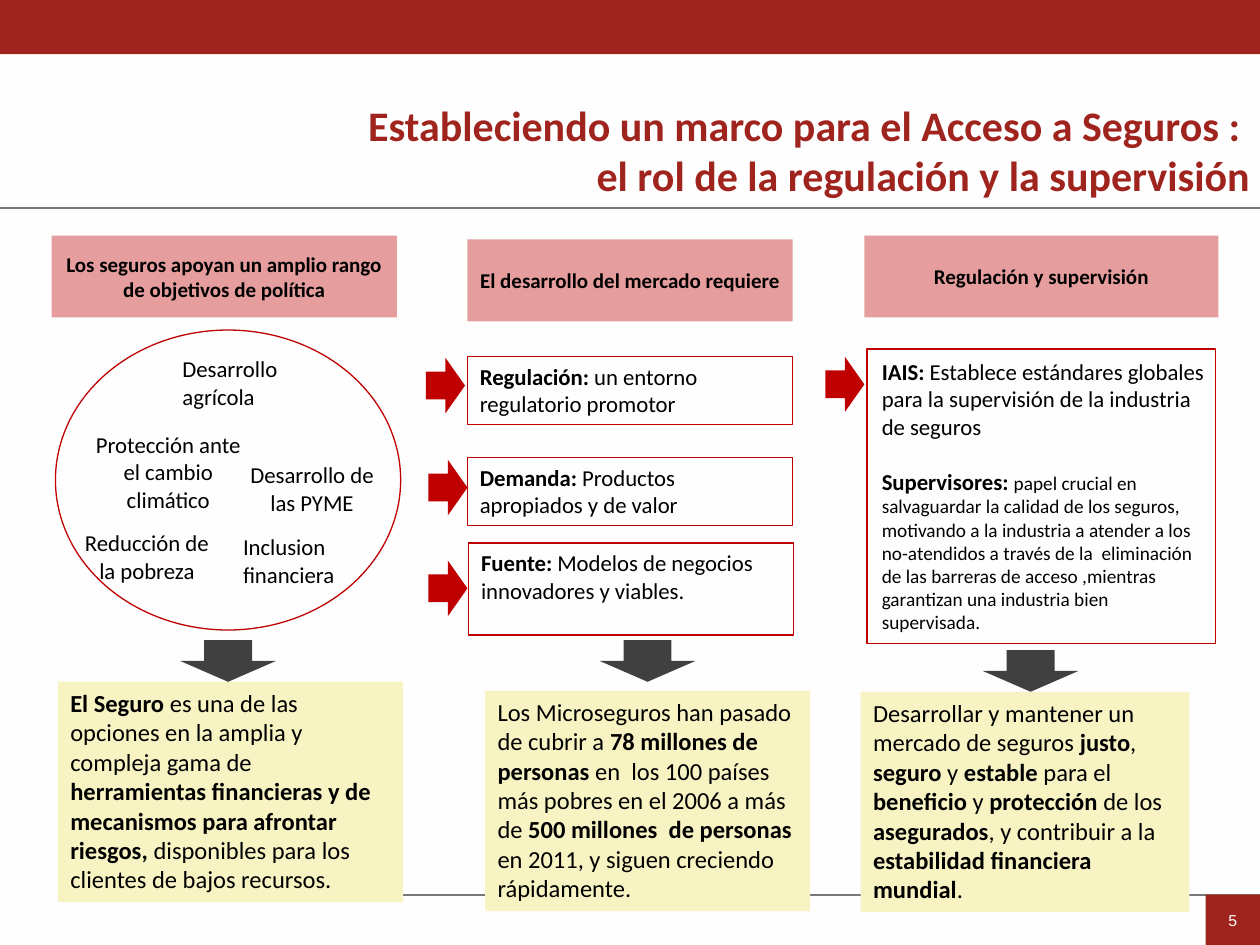
from dataclasses import dataclass
from typing import Optional

import pptx
import pptx.dml.color
import pptx.enum.shapes
import pptx.enum.text
import pptx.oxml
import pptx.oxml.ns
import pptx.util
from lxml import etree

Pt = pptx.util.Pt
MSO = pptx.enum.shapes.MSO_SHAPE
ALIGN = pptx.enum.text.PP_ALIGN
ANCHOR = pptx.enum.text.MSO_ANCHOR
qn = pptx.oxml.ns.qn

COLORS = {
    "background": "FEFEFE",
    "brand": "A0241E",
    "rule": "777978",
    "red": "C00000",
    "dark": "404040",
    "cream": "F7F3C3",
    "text": "000000",
}


@dataclass
class Box:
    """A shape or label; **marks** in its text switch bold on and off."""
    left: float
    top: float
    width: float
    height: float
    text: str = ""
    size: float = 13
    align: ALIGN = ALIGN.LEFT
    anchor: ANCHOR = ANCHOR.TOP
    color: str = "text"
    font: str = "Calibri"
    kind: Optional[MSO] = MSO.RECTANGLE  # None makes a text box
    fill: Optional[str] = None
    alpha: Optional[int] = None
    line: Optional[str] = None


def rgb(name: str) -> pptx.dml.color.RGBColor:
    return pptx.dml.color.RGBColor.from_string(COLORS[name])


def add_rule(slide, x: float, y: float) -> None:
    ln = slide.shapes.add_connector(
        pptx.enum.shapes.MSO_CONNECTOR.STRAIGHT, Pt(x), Pt(y), Pt(720), Pt(y))
    ln.line.color.rgb = rgb("rule")
    ln.line.width = Pt(1.25)
    etree.SubElement(ln._element.spPr, qn("a:effectLst"))


def write_paragraph(p, box: Box, text: str) -> None:
    p.alignment = box.align
    for i, part in enumerate(text.split("**")):
        if not part:
            continue
        if part == "\v":
            p.add_line_break()
            continue
        r = p.add_run()
        r.text = part
        r.font.name = box.font
        r.font.size = Pt(box.size)
        r.font.bold = i % 2 == 1
        r.font.color.rgb = rgb(box.color)


def add_box(slide, box: Box):
    area = [Pt(v) for v in (box.left, box.top, box.width, box.height)]
    if box.kind is None:
        sp = slide.shapes.add_textbox(*area)
    else:
        sp = slide.shapes.add_shape(box.kind, *area)
        sp.shadow.inherit = False
        if box.fill:
            sp.fill.solid()
            sp.fill.fore_color.rgb = rgb(box.fill)
        else:
            sp.fill.background()
        if box.alpha:
            clr = sp._element.spPr.find(".//" + qn("a:srgbClr"))
            etree.SubElement(clr, qn("a:alpha"), val=str(box.alpha * 1000))
        if box.line:
            sp.line.color.rgb = rgb(box.line)
            sp.line.width = Pt(0.75)
        else:
            sp.line.fill.background()
    if box.text:
        tf = sp.text_frame
        tf.word_wrap = True
        tf.vertical_anchor = box.anchor
        for i, text in enumerate(box.text.split("\n")):
            p = tf.paragraphs[0] if i == 0 else tf.add_paragraph()
            write_paragraph(p, box, text)
    return sp


def header(left: float, top: float, width: float, text: str) -> Box:
    return Box(left, top, width, 46.8, f"**{text}**", 12, ALIGN.CENTER,
               ANCHOR.MIDDLE, fill="red", alpha=38)


def label(left: float, top: float, width: float, height: float, text: str,
          align: ALIGN = ALIGN.CENTER) -> Box:
    return Box(left, top, width, height, text, align=align, kind=None)


def need(left: float, top: float, height: float, text: str) -> Box:
    return Box(left, top, 185.8, height, text, line="red")


def right_arrow(left: float, top: float) -> Box:
    return Box(left, top, 22.3, 31.7, kind=MSO.RIGHT_ARROW, fill="red")


def down_arrow(left: float, top: float) -> Box:
    return Box(left, top, 54.7, 23.8, kind=MSO.DOWN_ARROW, fill="dark")


def result(left: float, top: float, width: float, text: str) -> Box:
    return Box(left, top, width, 126, text, 14, fill="cream")


FRAME = [
    Box(0, 0, 720, 31, fill="brand"),
    Box(689, 511.2, 31, 28.8, "5", 9, ALIGN.CENTER, ANCHOR.MIDDLE,
        "background", "Arial", fill="brand"),
    Box(186.5, 53.3, 535, 65.5,
        "**Estableciendo un marco para el Acceso a Seguros : **\v**"
        "el rol de la regulación y la supervisión**",
        24, ALIGN.RIGHT, color="brand", kind=None),
]

POLICY = [
    header(29.5, 134.6, 197.3,
           "Los seguros apoyan un amplio rango de objetivos de política"),
    label(97.2, 199.4, 88.6, 38.9, "Desarrollo agrícola", ALIGN.LEFT),
    label(131.8, 259.9, 92.9, 38.9, "Desarrollo de las PYME"),
    label(39.6, 298.8, 88.6, 38.9, "Reducción de la pobreza"),
    label(131.8, 301, 88.6, 38.9, "Inclusion financiera", ALIGN.LEFT),
    label(43.2, 242.6, 105.8, 54.7, "Protección ante el cambio climático"),
    Box(31.7, 188.6, 197.3, 171.4, kind=MSO.OVAL, line="red"),
    result(33.1, 389.5, 197.3,
           "**El Seguro **es una de las opciones en la amplia y compleja gama "
           "de **herramientas financieras y de mecanismos para afrontar "
           "riesgos, **disponibles para los clientes de bajos recursos."),
    down_arrow(103, 365.8),
]

MARKET = [
    header(267.1, 136.8, 185.8, "El desarrollo del mercado requiere"),
    need(267.1, 203.8, 38.9, "**Regulación: **un entorno regulatorio promotor"),
    need(267.1, 261.4, 38.9, "**Demanda: **Productos apropiados y de valor"),
    need(267.8, 310.3, 52.6,
         "**Fuente: **Modelos de negocios innovadores y viables."),
    right_arrow(243.4, 204.5),
    right_arrow(244.8, 262.8),
    right_arrow(244.8, 320.4),
    result(277.2, 394.6, 185.8,
           "Los Microseguros han pasado de cubrir a **78 millones de personas**"
           " en  los 100 países más pobres en el 2006 a más de "
           "**500 millones  de personas **en 2011, y siguen creciendo "
           "rápidamente."),
    down_arrow(342.7, 365.8),
]

SUPERVISION = [
    header(493.9, 134.6, 202.3, "Regulación y supervisión"),
    Box(495.4, 199.4, 199.4, 168.5, line="red"),
    right_arrow(471.6, 203.8),
    result(491.8, 395.3, 187.9,
           "Desarrollar y mantener un mercado de seguros **justo**, **seguro** "
           "y **estable** para el **beneficio** y **protección** de los "
           "**asegurados**, y contribuir a la **estabilidad financiera "
           "mundial**."),
    down_arrow(561.6, 371.5),
]

STANDARDS = label(
    496.8, 200.9, 199.4, 164.9,
    "**IAIS: **Establece estándares globales para la supervisión de la "
    "industria de seguros\n"
    "**Supervisores: **papel crucial en salvaguardar la calidad de los "
    "seguros, motivando a la industria a atender a los no-atendidos a través "
    "de la  eliminación de las barreras de acceso ,mientras garantizan una "
    "industria bien supervisada.", ALIGN.LEFT)


def main() -> None:
    prs = pptx.Presentation()
    prs.slide_width, prs.slide_height = Pt(720), Pt(540)
    s = prs.slides.add_slide(prs.slide_layouts[6])
    s.background.fill.solid()
    s.background.fill.fore_color.rgb = rgb("background")

    # Rules, bands and title
    add_rule(s, 84, 511.2)
    add_rule(s, 0, 118.8)

    # The three columns
    for box in FRAME + POLICY + MARKET + SUPERVISION:
        add_box(s, box)

    # Standards text, with a smaller second explanation
    sp = add_box(s, STANDARDS)
    p = sp.text_frame.paragraphs[1]
    p.space_before = Pt(15.8)
    p.runs[1].font.size = Pt(11)

    prs.save("out.pptx")


if __name__ == "__main__":
    main()
